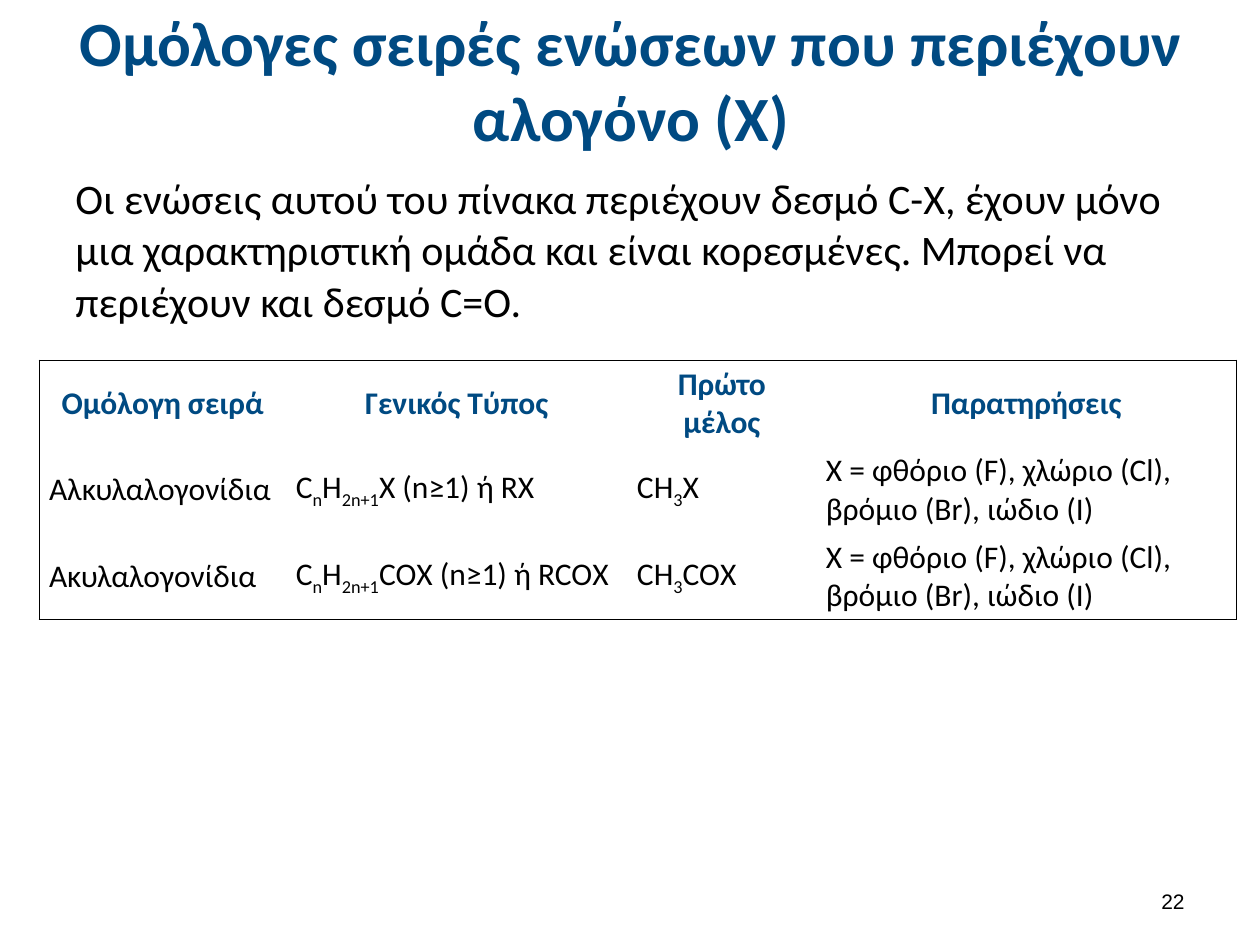
from lxml.etree import SubElement
from pptx import Presentation
from pptx.dml.color import RGBColor
from pptx.enum.text import MSO_ANCHOR as Anchor, PP_ALIGN as Align
from pptx.oxml.ns import qn
from pptx.util import Pt

BLUE = RGBColor(0x00, 0x4A, 0x82)
BLACK = RGBColor(0x00, 0x00, 0x00)

HALOGENS = "Χ = φθόριο (F), χλώριο (Cl), βρόμιο (Br), ιώδιο (I)"
# Text between tildes is subscript
SERIES = [
    ["Ομόλογη σειρά", "Γενικός Τύπος", "Πρώτο μέλος", "Παρατηρήσεις"],
    ["Αλκυλαλογονίδια", "C~n~H~2n+1~Χ (n≥1) ή RΧ", "CH~3~Χ", HALOGENS],
    ["Ακυλαλογονίδια", "C~n~H~2n+1~COΧ (n≥1) ή RCOΧ", "CH~3~COΧ", HALOGENS],
]
COLUMN_WIDTHS = [141, 195, 108, 240]
ROW_HEIGHT = 49.4


def write(frame, text, size=18, color=BLACK, bold=False, font="Calibri",
          align=Align.LEFT, anchor=Anchor.TOP, spacing=None):
    frame.word_wrap = True
    frame.vertical_anchor = anchor
    paragraph = frame.paragraphs[0]
    paragraph.alignment = align
    paragraph.space_before = Pt(0)
    if spacing:
        paragraph.line_spacing = spacing
    for index, part in enumerate(text.split("~")):
        run = paragraph.add_run()
        run.text = part
        run.font.name = font
        run.font.size = Pt(size)
        run.font.bold = bold
        run.font.color.rgb = color
        if index % 2:
            run.font._element.set("baseline", "-25000")


class SlideBuilder:
    def __init__(self, presentation):
        self.heading = {"color": BLUE, "bold": True, "align": Align.CENTER,
                        "anchor": Anchor.MIDDLE}
        self.slide = presentation.slides.add_slide(presentation.slide_layouts[5])

    def title(self, text, left, top, width, height):
        title = self.slide.shapes.title
        title.left, title.top = Pt(left), Pt(top)
        title.width, title.height = Pt(width), Pt(height)
        write(title.text_frame, text, size=36, **self.heading)

    def text(self, text, left, top, width, height, **style):
        box = self.slide.shapes.add_textbox(Pt(left), Pt(top), Pt(width), Pt(height))
        write(box.text_frame, text, **style)

    def table(self, rows, left, top, widths, row_height):
        table = self.slide.shapes.add_table(
            len(rows), len(widths), Pt(left), Pt(top),
            Pt(sum(widths)), Pt(row_height * len(rows))).table
        table.first_row = table.horz_banding = False
        for column, width in zip(table.columns, widths):
            column.width = Pt(width)
        last_row, last_column = len(rows) - 1, len(widths) - 1
        for r, row in enumerate(rows):
            for c, text in enumerate(row):
                cell = table.cell(r, c)
                style = {} if r else self.heading
                write(cell.text_frame, text, **style)
                cell.vertical_anchor = Anchor.MIDDLE
                cell.margin_left = cell.margin_right = Pt(5.5 if r else 5)
                cell.margin_top = cell.margin_bottom = Pt(2.75)
                self.frame_cell(cell, {"lnL": c == 0, "lnR": c == last_column,
                                       "lnT": r == 0, "lnB": r == last_row})
                cell.fill.background()

    def frame_cell(self, cell, edges):
        properties = cell._tc.get_or_add_tcPr()
        for edge, visible in edges.items():
            line = SubElement(properties, qn(f"a:{edge}"), w=str(Pt(1)))
            if visible:
                fill = SubElement(line, qn("a:solidFill"))
                SubElement(fill, qn("a:srgbClr"), val=str(BLACK))
            else:
                SubElement(line, qn("a:noFill"))


def main():
    presentation = Presentation()
    presentation.slide_width, presentation.slide_height = Pt(720), Pt(540)
    builder = SlideBuilder(presentation)

    # Title and introduction
    builder.title("Ομόλογες σειρές ενώσεων που περιέχουν αλογόνο (Χ)\u00a0".rstrip(),
                  36.5, 9.5, 648, 71)
    builder.text("Οι ενώσεις αυτού του πίνακα περιέχουν δεσμό C-Χ, έχουν μόνο μια "
                 "χαρακτηριστική ομάδα και είναι κορεσμένες. Μπορεί να περιέχουν "
                 "και δεσμό C=O.", 36, 94.5, 648, 103, size=24, spacing=1.02)

    # Homologous series
    builder.table(SERIES, 22.5, 206, COLUMN_WIDTHS, ROW_HEIGHT)

    # Page number
    builder.text("22", 516, 500.5, 168, 28.5, size=12, font="Arial",
                 align=Align.RIGHT, anchor=Anchor.MIDDLE)

    presentation.save("out.pptx")


if __name__ == "__main__":
    main()
